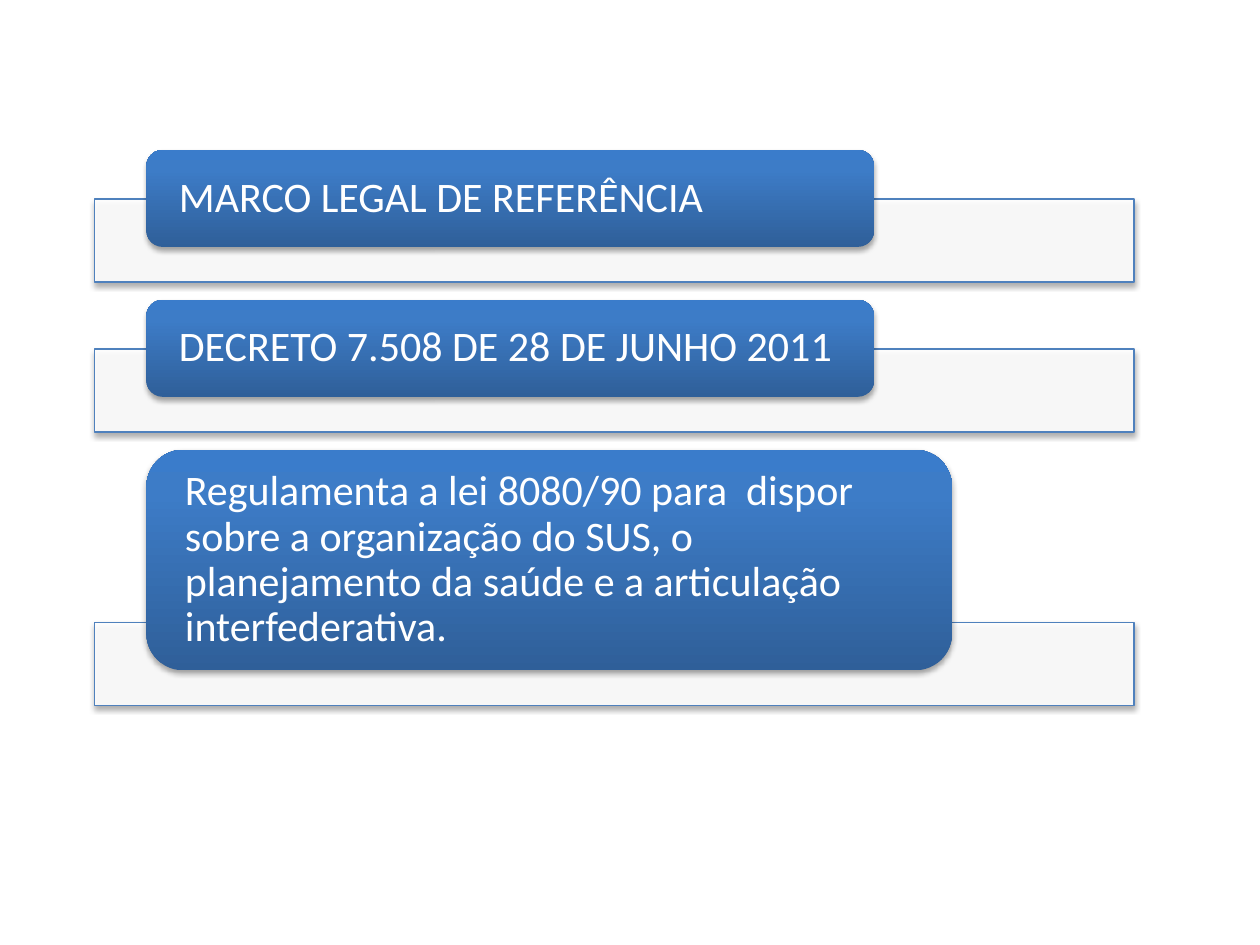
from dataclasses import dataclass

from lxml.etree import SubElement
from pptx import Presentation
from pptx.dml.color import RGBColor
from pptx.enum.shapes import MSO_SHAPE as Shape
from pptx.enum.text import MSO_ANCHOR as Anchor, PP_ALIGN as Align
from pptx.oxml.ns import qn
from pptx.util import Inches, Pt


@dataclass(frozen=True)
class Theme:
    font: str = "Calibri"
    text_size: float = 24
    text: str = "FFFFFF"
    bar: str = "FFFFFF"
    bar_opacity: int = 90
    bar_line: str = "4F81BD"
    line_width: float = 0.75
    label_stops: tuple = ((0, "2F5F99"), (80, "3D7CC7"), (100, "3A7CCB"))
    shadow: str = "000000"
    shadow_opacity: int = 35


THEME = Theme()
WIDTH, HEIGHT = 10, 7.5

# The list's box, and its parts in inches
LIST_BOX = (0.075 * WIDTH, 1.19, 0.825 * WIDTH)
ROW_GAP = 0.14
BAR_HEIGHT = 0.66
OVERLAP = 0.38
LABEL_INDENT = 0.05
TEXT_INSET = 0.22

# Text, label height in inches, label width as a share of the list's width
ENTRIES = (
    ("MARCO LEGAL DE REFERÊNCIA", 0.77, 0.7),
    ("DECRETO 7.508 DE 28 DE JUNHO 2011", 0.77, 0.7),
    ("Regulamenta a lei 8080/90 para  dispor sobre a organização do SUS, "
     "o planejamento da saúde e a articulação interfederativa.", 1.75, 0.775),
)


def add_color(parent, color, opacity=100):
    element = SubElement(parent, qn("a:srgbClr"), val=color)
    if opacity < 100:
        SubElement(element, qn("a:alpha"), val=str(opacity * 1000))


def add_shadow(shape):
    shape.shadow.inherit = False
    effects = shape._element.spPr.find(qn("a:effectLst"))
    shadow = SubElement(effects, qn("a:outerShdw"), blurRad=str(Pt(3.1)),
                        dist=str(Pt(1.8)), dir="5400000", rotWithShape="0")
    add_color(shadow, THEME.shadow, THEME.shadow_opacity)


def add_box(group, kind, left, top, width, height):
    shape = group.shapes.add_shape(kind, *map(Inches, (left, top, width, height)))
    add_shadow(shape)
    return shape


def add_bar(group, left, top, width):
    bar = add_box(group, Shape.RECTANGLE, left, top, width, BAR_HEIGHT)
    bar.fill.solid()
    bar.fill.fore_color.rgb = RGBColor.from_string(THEME.bar)
    color = bar._element.spPr.find(qn("a:solidFill"))[0]
    SubElement(color, qn("a:alpha"), val=str(THEME.bar_opacity * 1000))
    bar.line.color.rgb = RGBColor.from_string(THEME.bar_line)
    bar.line.width = Pt(THEME.line_width)


def fill_with_gradient(shape):
    shape.fill.gradient()
    shape.fill.gradient_angle = 90
    stops = shape._element.spPr.find(qn("a:gradFill")).find(qn("a:gsLst"))
    for stop in list(stops):
        stops.remove(stop)
    for position, color in THEME.label_stops:
        add_color(SubElement(stops, qn("a:gs"), pos=str(position * 1000)), color)


def add_label(group, left, top, width, height, text):
    label = add_box(group, Shape.ROUNDED_RECTANGLE, left, top, width, height)
    fill_with_gradient(label)
    label.line.fill.background()

    frame = label.text_frame
    frame.word_wrap = True
    frame.vertical_anchor = Anchor.MIDDLE
    frame.margin_left = frame.margin_right = Inches(TEXT_INSET)
    frame.margin_top = frame.margin_bottom = 0
    paragraph = frame.paragraphs[0]
    paragraph.alignment = Align.LEFT
    paragraph.line_spacing = 0.9
    run = paragraph.add_run()
    run.text = text
    run.font.name = THEME.font
    run.font.size = Pt(THEME.text_size)
    run.font.color.rgb = RGBColor.from_string(THEME.text)


def add_list(slide, left, top, width):
    """Stack the entries, each label overlapping the bar below it."""
    group = slide.shapes.add_group_shape()
    for text, height, share in ENTRIES:
        bar_top = top + height - OVERLAP
        add_bar(group, left, bar_top, width)
        add_label(group, left + LABEL_INDENT * width, top, share * width, height, text)
        top = bar_top + BAR_HEIGHT + ROW_GAP


def main():
    presentation = Presentation()
    presentation.slide_width = Inches(WIDTH)
    presentation.slide_height = Inches(HEIGHT)
    slide = presentation.slides.add_slide(presentation.slide_layouts[6])
    add_list(slide, *LIST_BOX)
    presentation.save("out.pptx")


if __name__ == "__main__":
    main()
